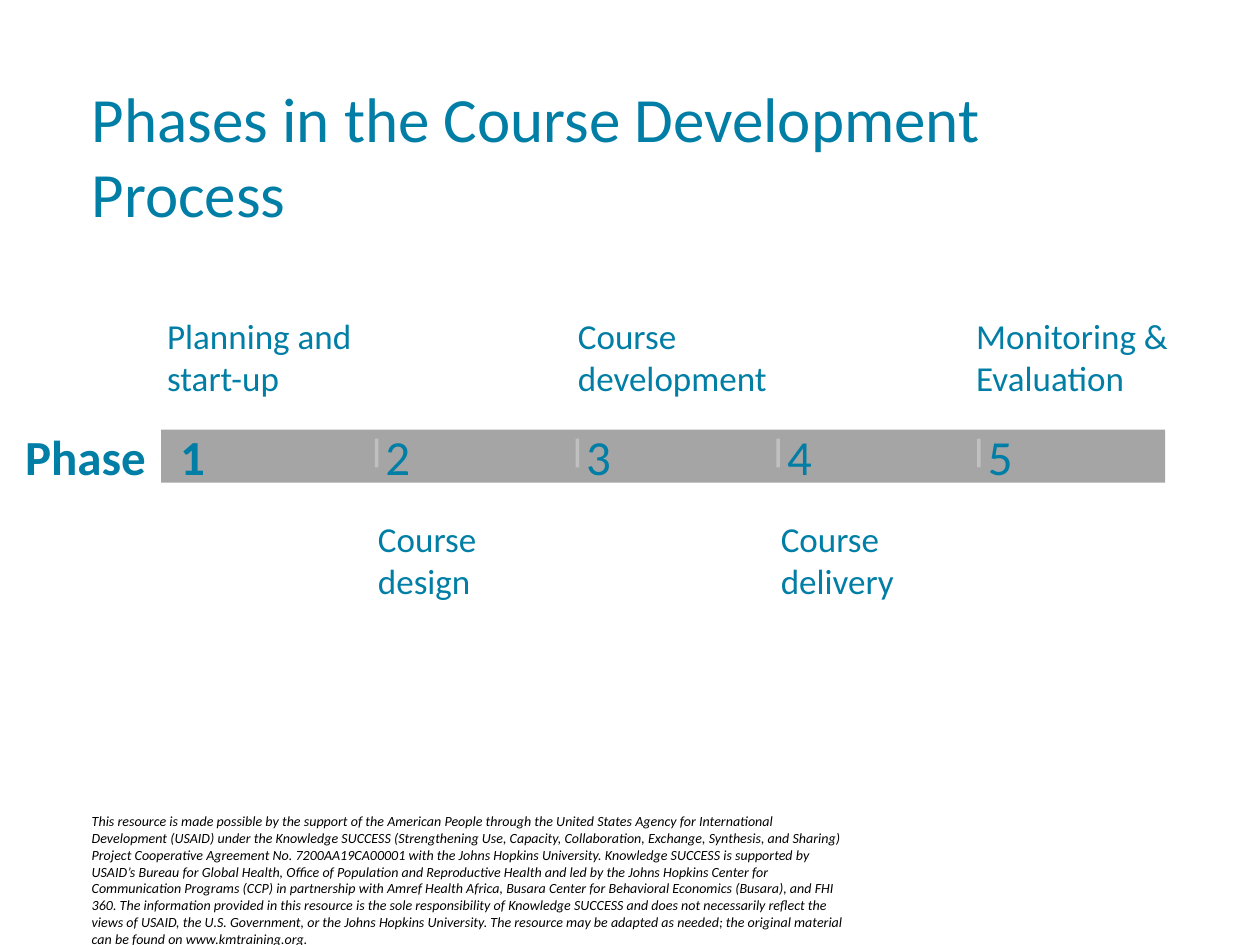
from lxml import etree
from pptx import Presentation
from pptx.dml.color import RGBColor
from pptx.enum import shapes, text
from pptx.oxml import ns
from pptx.util import Cm, Pt

HUES = {"teal": "007EA5", "grey": "A5A5A5", "white": "FFFFFF", "black": "000000"}
TITLE = "Phases in the Course Development Process"
PHASES = [
    ("Planning and start-up", 3.12, 4.6),
    ("Course design", 7.37, 4.24),
    ("Course development", 11.4, 4.6),
    ("Course delivery", 15.49, 4.6),
    ("Monitoring & Evaluation", 19.43, 4.6),
]
NOTICE = [
    "This resource is made possible by the support of the American People through "
    "the United States Agency for International Development (USAID) under the "
    "Knowledge SUCCESS (Strengthening Use, Capacity, Collaboration, Exchange, "
    "Synthesis, and Sharing) Project Cooperative Agreement No. 7200AA19CA00001 with "
    "the Johns Hopkins University.",
    "Knowledge SUCCESS is supported by USAID’s Bureau "
    "for Global Health, Office of Population and Reproductive Health and led by the "
    "Johns Hopkins Center for Communication Programs (CCP) in partnership with Amref "
    "Health Africa, Busara Center for Behavioral Economics (Busara), and FHI 360.",
    "The information provided in this resource is the sole responsibility of "
    "Knowledge SUCCESS and does not necessarily reflect the views of USAID, the U.S. "
    "Government, or the Johns Hopkins University.",
    "The resource may be adapted as needed; the original material can be found on "
    "www.kmtraining.org.",
]


def color(name):
    return RGBColor.from_string(HUES[name])


def write(slide, box, words, size, hue="teal", bold=False, slant=False,
          tight=False, stop=None):
    frame = slide.shapes.add_textbox(*map(Cm, box)).text_frame
    frame.word_wrap = True
    if tight:
        frame.margin_left = frame.margin_right = 0
        frame.margin_top = frame.margin_bottom = 0
        frame.vertical_anchor = text.MSO_ANCHOR.MIDDLE
    line = frame.paragraphs[0]
    line.text = words
    if stop:
        tabs = etree.SubElement(line._p.get_or_add_pPr(), ns.qn("a:tabLst"))
        etree.SubElement(tabs, ns.qn("a:tab"), pos=str(Cm(stop)), algn="l")
    font = line.font
    font.name, font.size = "Calibri", Pt(size)
    font.bold, font.italic = bold, slant
    font.color.rgb = color(hue)


def add_tick(slide, x, top, end):
    tick = slide.shapes.add_connector(
        shapes.MSO_CONNECTOR.STRAIGHT, Cm(x), Cm(top), Cm(x), Cm(end))
    tick.line.color.rgb = color("white")
    tick.line.width = Pt(2)
    fill = tick._element.spPr.find(".//" + ns.qn("a:srgbClr"))
    etree.SubElement(fill, ns.qn("a:alpha"), val="30000")
    etree.SubElement(tick._element.spPr, ns.qn("a:effectLst"))


def add_band(slide, box):
    left, top, width, height = box
    bar = slide.shapes.add_shape(shapes.MSO_SHAPE.RECTANGLE, *map(Cm, box))
    bar.shadow.inherit = False
    bar.fill.solid()
    bar.fill.fore_color.rgb = color("grey")
    bar.line.fill.background()
    write(slide, (left - 2.74, top + 0.26, 4.47, 0.53), "Phase\t1", 28,
          bold=True, tight=True, stop=3.12)
    first, step = left + 4.34, width / 5
    for i in range(4):
        x = first + i * step
        add_tick(slide, x, top + 0.18, top + 0.76)
        write(slide, (x + 0.18, top + 0.28, 0.5, 0.5), str(i + 2), 28, tight=True)


def add_names(slide, above, below):
    for i, (name, x, width) in enumerate(PHASES):
        write(slide, (x, below if i % 2 else above, width, 1.55), name, 20)


def main():
    deck = Presentation()
    deck.slide_width, deck.slide_height = Cm(25.4), Cm(19.05)
    slide = deck.slides.add_slide(deck.slide_layouts[6])
    write(slide, (1.6, 16.26, 15.82, 2.64), " ".join(NOTICE), 8,
          hue="black", slant=True)
    write(slide, (1.6, 1.47, 22.22, 2.54), TITLE, 36)
    add_names(slide, 6.22, 10.31)
    add_band(slide, (3.25, 8.66, 20.24, 1.07))
    deck.save("out.pptx")


if __name__ == "__main__":
    main()
